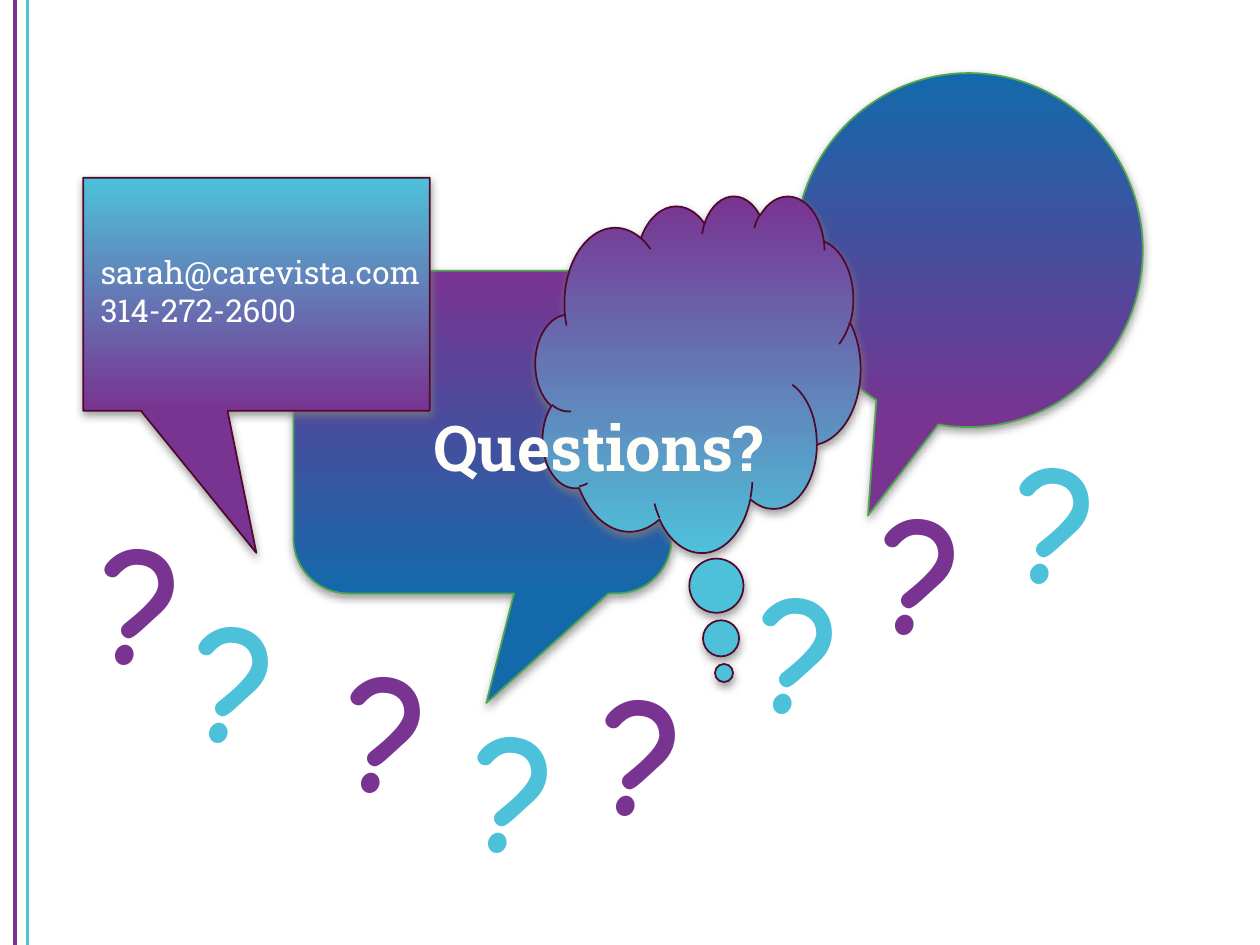
from lxml.etree import SubElement
from pptx import Presentation
from pptx.dml.color import RGBColor
from pptx.enum.shapes import MSO_CONNECTOR, MSO_SHAPE
from pptx.enum.text import MSO_AUTO_SIZE, PP_ALIGN
from pptx.oxml.ns import qn
from pptx.util import Inches, Pt

HUES = {
    "purple": "793391", "cyan": "4EC1DA", "blue": "1369AA",
    "green": "4EA64E", "wine": "50092D", "cream": "FFFDF7",
    "white": "FFFFFF", "gray": "808080",
}


def rgb(name):
    return RGBColor.from_string(HUES[name])


def add_text(box, lines, font, size, hue, bold=False, align=PP_ALIGN.LEFT, grow=True):
    """Add a text box with one paragraph per line; box is left, top, width, height."""
    shape = slide.shapes.add_textbox(*map(Inches, box))
    frame = shape.text_frame
    frame.word_wrap = True
    frame.auto_size = MSO_AUTO_SIZE.SHAPE_TO_FIT_TEXT if grow else MSO_AUTO_SIZE.NONE
    frame.text = "\n".join(lines)
    for para in frame.paragraphs:
        para.alignment = align
        para.font.name = font
        para.font.size = Pt(size)
        para.font.bold = bold
        para.font.color.rgb = rgb(hue)
    return shape


prs = Presentation()
prs.slide_width, prs.slide_height = Inches(10), Inches(7.5)
slide = prs.slides.add_slide(prs.slide_layouts[6])

# Speech bubbles: preset, box, adjustments, top hue, bottom hue, outline
bubbles = [
    (MSO_SHAPE.OVAL_CALLOUT, (6.31, 0.58, 2.76, 2.81), (-0.29, 0.75),
     "blue", "purple", "green"),
    (MSO_SHAPE.ROUNDED_RECTANGULAR_CALLOUT, (2.33, 2.15, 3, 2.56), (0.01, 0.84, 0.17),
     "purple", "blue", "green"),
    (MSO_SHAPE.RECTANGULAR_CALLOUT, (0.66, 1.41, 2.75, 1.85), (0, 1.11),
     "cyan", "purple", "wine"),
    (MSO_SHAPE.CLOUD_CALLOUT, (4.25, 1.55, 2.58, 2.83), (0.08, 0.84),
     "purple", "cyan", "wine"),
]
for kind, box, adjust, top, bottom, edge in bubbles:
    bubble = slide.shapes.add_shape(kind, *map(Inches, box))
    for i, value in enumerate(adjust):
        bubble.adjustments[i] = value
    bubble.fill.gradient()
    bubble.fill.gradient_angle = 270
    for stop, place, hue in zip(bubble.fill.gradient_stops, (0, 1), (top, bottom)):
        stop.position = place
        stop.color.rgb = rgb(hue)
    bubble.line.color.rgb = rgb(edge)
    bubble.line.width = Pt(1)
    bubble.shadow.inherit = False
    effects = bubble.element.spPr.find(qn("a:effectLst"))
    shadow = SubElement(effects, qn("a:outerShdw"), blurRad=str(Pt(5)),
                        dist=str(Pt(2)), dir="5400000", rotWithShape="0")
    tint = SubElement(shadow, qn("a:srgbClr"), val=HUES["gray"])
    SubElement(tint, qn("a:alpha"), val="75000")

add_text((0.62, 3.19, 8.26, 1.22), ["Questions?"], "Roboto Slab", 36, "cream",
         bold=True, align=PP_ALIGN.CENTER, grow=False)

# Question marks in alternating hues
spots = [(0.71, 3.89), (1.45, 4.51), (2.66, 4.91), (3.67, 5.38),
         (4.68, 5.09), (5.93, 4.28), (6.9, 3.65), (7.97, 3.25)]
for i, (left, top) in enumerate(spots):
    mark = add_text((left, top, 0.86, 1.72), ["?"], "Comic Neue", 96,
                    ("purple", "cyan")[i % 2], bold=True)
    if i == 0:
        mark.fill.solid()
        mark.fill.fore_color.rgb = rgb("white")

# Stripes down the left edge
for x, hue in ((0.12, "purple"), (0.22, "cyan")):
    stripe = slide.shapes.add_connector(
        MSO_CONNECTOR.STRAIGHT, Inches(x), 0, Inches(x), Inches(7.51))
    stripe.line.color.rgb = rgb(hue)
    stripe.line.width = Pt(2)
    SubElement(stripe.element.spPr, qn("a:effectLst"))

add_text((0.7, 1.96, 2.8, 0.71), ["sarah@carevista.com", "314-272-2600"],
         "Roboto Slab", 18, "white")

prs.save("out.pptx")
